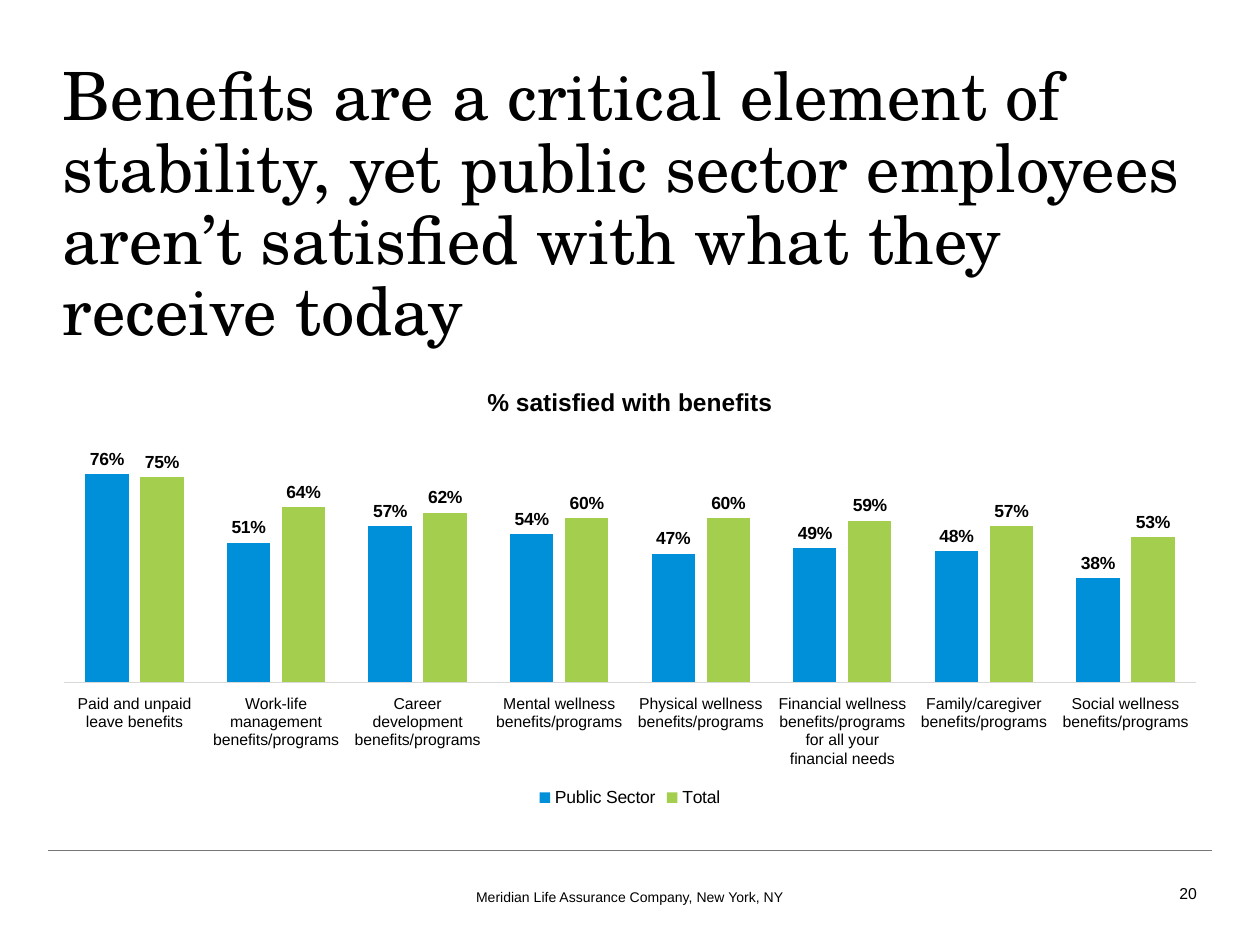
from lxml import etree
from pptx import Presentation
from pptx.chart.data import CategoryChartData
from pptx.dml.color import RGBColor
from pptx.enum.chart import XL_CHART_TYPE as ChartType, XL_LABEL_POSITION as LabelPos
from pptx.enum.chart import XL_LEGEND_POSITION as LegendPos, XL_TICK_MARK as Tick
from pptx.enum.chart import XL_TICK_LABEL_POSITION as TickLabel
from pptx.enum.shapes import MSO_CONNECTOR as Connector
from pptx.enum.text import MSO_ANCHOR as Anchor, PP_ALIGN as Align
from pptx.oxml.ns import qn
from pptx.util import Cm, Pt

BLACK = "000000"
SANS = "Arial"
SERIF = "TeX Gyre Schola"
MARGIN, CONTENT_WIDTH = 1.27, 22.86
PLOT_LAYOUT = {
    "layoutTarget": "inner", "xMode": "edge", "yMode": "edge",
    "x": 0, "y": 0.06, "w": 1, "h": 0.59,
}
SATISFACTION = {
    "Paid and unpaid leave benefits": (0.76, 0.75),
    "Work-life management benefits/programs": (0.51, 0.64),
    "Career development benefits/programs": (0.57, 0.62),
    "Mental wellness benefits/programs": (0.54, 0.60),
    "Physical wellness benefits/programs": (0.47, 0.60),
    "Financial wellness benefits/programs for all your financial needs": (0.49, 0.59),
    "Family/caregiver benefits/programs": (0.48, 0.57),
    "Social wellness benefits/programs": (0.38, 0.53),
}
GROUPS = {"Public Sector": "0090DA", "Total": "A4CE4E"}


def color(hex_code):
    return RGBColor.from_string(hex_code)


class SlideBuilder:
    """Holds the current slide and the style shared by its elements."""

    def __init__(self, slide):
        self.slide = slide

    def style(self, font, size, bold=False, name=SANS):
        font.name, font.size, font.bold = name, Pt(size), bold
        font.color.rgb = color(BLACK)

    def text(self, words, left, top, width, height, size, align=Align.LEFT,
             anchor=Anchor.TOP, bold=False, name=SANS, spacing=None):
        frame = self.slide.shapes.add_textbox(
            Cm(left), Cm(top), Cm(width), Cm(height)).text_frame
        frame.word_wrap = True
        frame.margin_left = frame.margin_right = 0
        frame.margin_top = frame.margin_bottom = 0
        frame.vertical_anchor = anchor
        frame.text = words
        paragraph = frame.paragraphs[0]
        paragraph.alignment = align
        paragraph.line_spacing = spacing
        for run in paragraph.runs:
            self.style(run.font, size, bold, name)

    def rule(self, left, right, top, hex_code):
        line = self.slide.shapes.add_connector(
            Connector.STRAIGHT, Cm(left), Cm(top), Cm(right), Cm(top))
        line.line.color.rgb = color(hex_code)
        line.line.width = Pt(0.75)
        etree.SubElement(line.element.spPr, qn("a:effectLst"))

    def columns(self, left, top, width, height, values, groups):
        data = CategoryChartData(number_format="0%")
        data.categories = list(values)
        for group, shares in zip(groups, zip(*values.values())):
            data.add_series(group, shares)
        chart = self.slide.shapes.add_chart(
            ChartType.COLUMN_CLUSTERED, Cm(left), Cm(top), Cm(width), Cm(height), data).chart
        self.style(chart.font, 10)
        chart.has_title = False
        chart.has_legend = True
        chart.legend.position = LegendPos.BOTTOM
        chart.legend.include_in_layout = False
        self.style(chart.legend.font, 10)

        shares_axis = chart.value_axis
        shares_axis.minimum_scale, shares_axis.maximum_scale = 0, 0.8
        shares_axis.has_major_gridlines = False
        shares_axis.visible = False
        benefits_axis = chart.category_axis
        benefits_axis.major_tick_mark = benefits_axis.minor_tick_mark = Tick.NONE
        benefits_axis.tick_label_position = TickLabel.LOW
        benefits_axis.format.line.color.rgb = color("D9D9D9")
        benefits_axis.format.line.width = Pt(0.75)
        self.style(benefits_axis.tick_labels.font, 9)

        plot = chart.plots[0]
        plot.gap_width, plot.overlap = 100, -27
        plot.vary_by_categories = False
        for series, fill in zip(plot.series, groups.values()):
            series.format.fill.solid()
            series.format.fill.fore_color.rgb = color(fill)
            labels = series.data_labels
            labels.show_value = True
            labels.position = LabelPos.OUTSIDE_END
            labels.number_format, labels.number_format_is_linked = "0%", False
            self.style(labels.font, 10, bold=True)
        self.place_plot(chart)

    def place_plot(self, chart):
        area = chart.element.find(".//" + qn("c:plotArea"))
        for automatic in area.findall(qn("c:layout")):
            area.remove(automatic)
        layout = etree.Element(qn("c:layout"))
        area.insert(0, layout)
        manual = etree.SubElement(layout, qn("c:manualLayout"))
        for key, value in PLOT_LAYOUT.items():
            etree.SubElement(manual, qn("c:" + key)).set("val", str(value))


def main():
    deck = Presentation()
    deck.slide_width, deck.slide_height = Cm(25.4), Cm(19.05)
    page = SlideBuilder(deck.slides.add_slide(deck.slide_layouts[6]))
    page.text("20", 23.37, 17.68, 0.76, 0.64, 9, Align.RIGHT, Anchor.MIDDLE)
    page.rule(0.97, 24.43, 17.15, "75787B")
    page.text("Meridian Life Assurance Company, New York, NY",
              MARGIN, 17.78, CONTENT_WIDTH, 0.61, 8, Align.CENTER, Anchor.MIDDLE)
    page.text("Benefits are a critical element of stability, yet public sector employees "
              "aren’t satisfied with what they\vreceive today",
              MARGIN, 1.27, CONTENT_WIDTH, 2.79, 38, name=SERIF, spacing=0.9)
    page.text("% satisfied with benefits",
              MARGIN, 7.8, CONTENT_WIDTH, 0.66, 14, Align.CENTER, bold=True)
    page.columns(MARGIN, 8.89, CONTENT_WIDTH, 7.49, SATISFACTION, GROUPS)
    deck.save("out.pptx")


if __name__ == "__main__":
    main()
